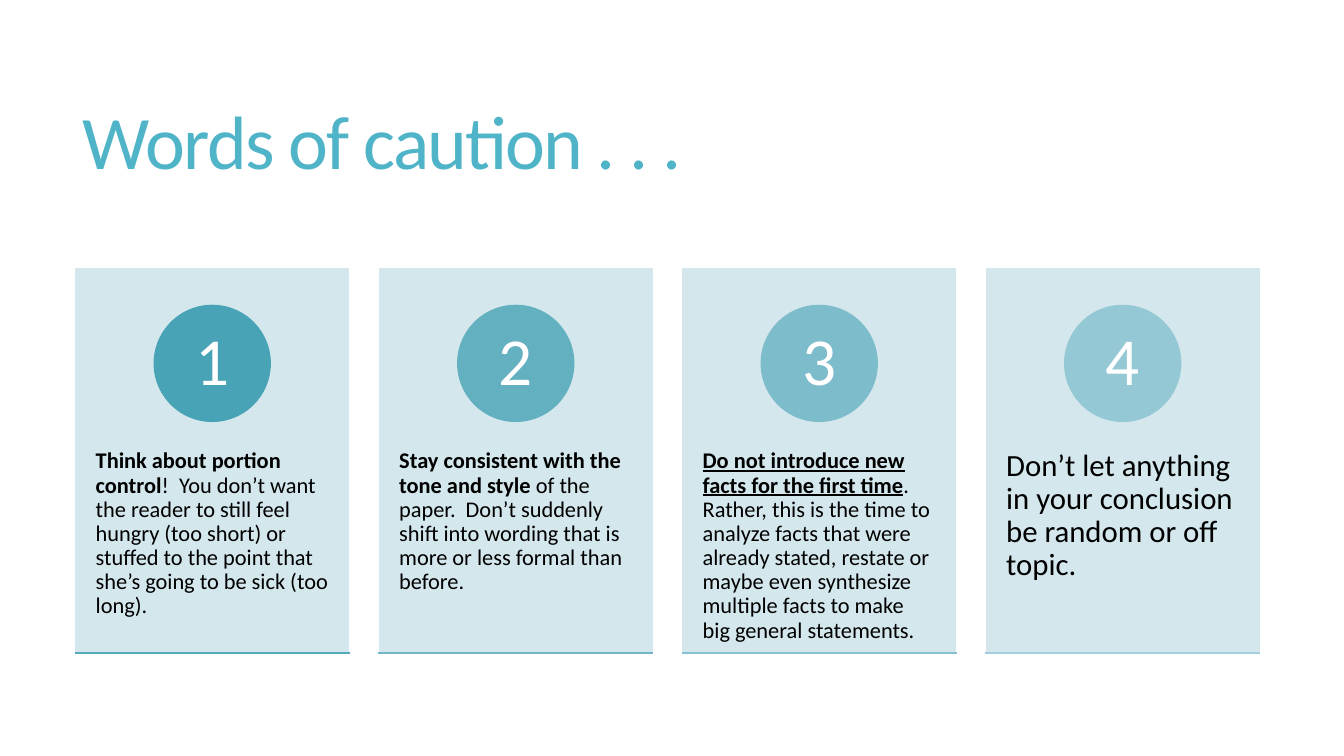
from lxml import etree
from pptx import Presentation
from pptx.dml.color import RGBColor
from pptx.enum.shapes import MSO_CONNECTOR, MSO_SHAPE
from pptx.enum.text import MSO_ANCHOR, MSO_AUTO_SIZE, PP_ALIGN
from pptx.oxml.ns import qn
from pptx.util import Pt

RECT, OVAL, STRAIGHT = MSO_SHAPE.RECTANGLE, MSO_SHAPE.OVAL, MSO_CONNECTOR.STRAIGHT
TOP, MIDDLE = MSO_ANCHOR.TOP, MSO_ANCHOR.MIDDLE
LEFT, CENTER = PP_ALIGN.LEFT, PP_ALIGN.CENTER
NO_AUTOFIT = MSO_AUTO_SIZE.NONE

PX = 9144  # 100 px to the inch
TITLE_ONLY = 5
COLORS = {"title": "50B4C8", "card": "D0E5EB", "white": "FFFFFF", "black": "000000"}

CARD_LEFT, CARD_TOP, CARD_WIDTH, CARD_HEIGHT = 74, 265, 273, 383
CARD_PITCH = 301
CIRCLE_TOP, CIRCLE_SIZE, NUMBER_SIZE = 303, 115, 81
ADVICE_TOP, ADVICE_HEIGHT = 410, 230

BOLD = {"bold": True}
BOLD_UNDERLINED = {"bold": True, "underline": True}
PLAIN = {}

# circle colour, rule colour, text size, runs
CARDS = [
    ("49A3B6", "55AABB", 16, [
        ("Think about portion control", BOLD),
        ("!  You don’t want the reader to still feel hungry (too short) or stuffed "
         "to the point that she’s going to be sick (too long).", PLAIN)]),
    ("62B0C0", "6FB6C6", 16, [
        ("Stay consistent with the tone and style ", BOLD),
        ("of the paper.  Don’t suddenly shift into wording that is more or less "
         "formal than before.", PLAIN)]),
    ("7CBCCB", "88C2D0", 16, [
        ("Do not introduce new facts for the first time", BOLD_UNDERLINED),
        (".  Rather, this is the time to analyze facts that were already stated, "
         "restate or maybe even synthesize multiple facts to make big general "
         "statements.", PLAIN)]),
    ("95C8D5", "A2CFDB", 22, [
        ("Don’t let anything in your conclusion be random or off topic.", PLAIN)]),
]


class SlideBuilder:
    font_name = "Calibri"

    def __init__(self, slide):
        self.slide = slide

    def fill_frame(self, frame, runs, size, color, anchor, align=LEFT, spacing=0.9):
        """Fill a text frame with one paragraph of (text, format) runs."""
        frame.word_wrap = True
        frame.auto_size = NO_AUTOFIT
        frame.vertical_anchor = anchor
        paragraph = frame.paragraphs[0]
        paragraph.alignment = align
        paragraph.line_spacing = spacing
        for text, extra in runs:
            run = paragraph.add_run()
            run.text = text
            run.font.color.rgb = RGBColor.from_string(color)
            for name, value in {"name": self.font_name, "size": Pt(size), **extra}.items():
                setattr(run.font, name, value)
        return paragraph

    def title(self, text, left, top, width, height):
        heading = self.slide.shapes.title
        box = {"left": left, "top": top, "width": width, "height": height}
        for name, value in box.items():
            setattr(heading, name, value * PX)
        paragraph = self.fill_frame(heading.text_frame, [(text, PLAIN)], 54,
                                    COLORS["title"], MIDDLE, spacing=0.85)
        paragraph.runs[0].font._element.set("spc", "-120")

    def text(self, box, runs, size, color, insets, anchor=TOP, align=LEFT):
        frame = self.slide.shapes.add_textbox(*(v * PX for v in box)).text_frame
        side, end = insets
        margins = {"left": side, "right": side, "top": end, "bottom": end}
        for edge, value in margins.items():
            setattr(frame, f"margin_{edge}", value * PX)
        self.fill_frame(frame, runs, size, color, anchor, align)

    def shape(self, preset, box, fill, line, opacity=100):
        shape = self.slide.shapes.add_shape(preset, *(v * PX for v in box))
        shape.shadow.inherit = False
        shape.fill.solid()
        shape.fill.fore_color.rgb = RGBColor.from_string(fill)
        shape.line.color.rgb = RGBColor.from_string(line)
        shape.line.width = Pt(1)
        if opacity < 100:
            color = shape._element.spPr.find(qn("a:solidFill"))[0]
            etree.SubElement(color, qn("a:alpha"), val=str(opacity * 1000))

    def rule(self, left, y, width, color):
        line = self.slide.shapes.add_connector(
            STRAIGHT, left * PX, y * PX, (left + width) * PX, y * PX)
        line.line.color.rgb = RGBColor.from_string(color)
        line.line.width = Pt(1)
        etree.SubElement(line._element.spPr, qn("a:effectLst"))

    def card(self, index, circle_color, rule_color, size, advice):
        left = CARD_LEFT + index * CARD_PITCH
        circle_left = left + (CARD_WIDTH - CIRCLE_SIZE) // 2
        inset = (CIRCLE_SIZE - NUMBER_SIZE) // 2
        self.shape(RECT, (left, CARD_TOP, CARD_WIDTH, CARD_HEIGHT),
                   COLORS["card"], COLORS["white"], opacity=90)
        self.text((left, ADVICE_TOP, CARD_WIDTH, ADVICE_HEIGHT),
                  advice, size, COLORS["black"], insets=(21, 36))
        self.shape(OVAL, (circle_left, CIRCLE_TOP, CIRCLE_SIZE, CIRCLE_SIZE),
                   circle_color, circle_color)
        self.text((circle_left + inset, CIRCLE_TOP + inset, NUMBER_SIZE, NUMBER_SIZE),
                  [(str(index + 1), PLAIN)], 48, COLORS["white"],
                  insets=(9, 1), anchor=MIDDLE, align=CENTER)
        self.rule(left, CARD_TOP + CARD_HEIGHT, CARD_WIDTH, rule_color)


def main():
    deck = Presentation()
    deck.slide_width, deck.slide_height = 1333 * PX, 750 * PX
    builder = SlideBuilder(deck.slides.add_slide(deck.slide_layouts[TITLE_ONLY]))
    builder.title("Words of caution . . .", 72, 55, 1178, 181)
    for index, card in enumerate(CARDS):
        builder.card(index, *card)
    deck.save("out.pptx")


if __name__ == "__main__":
    main()
